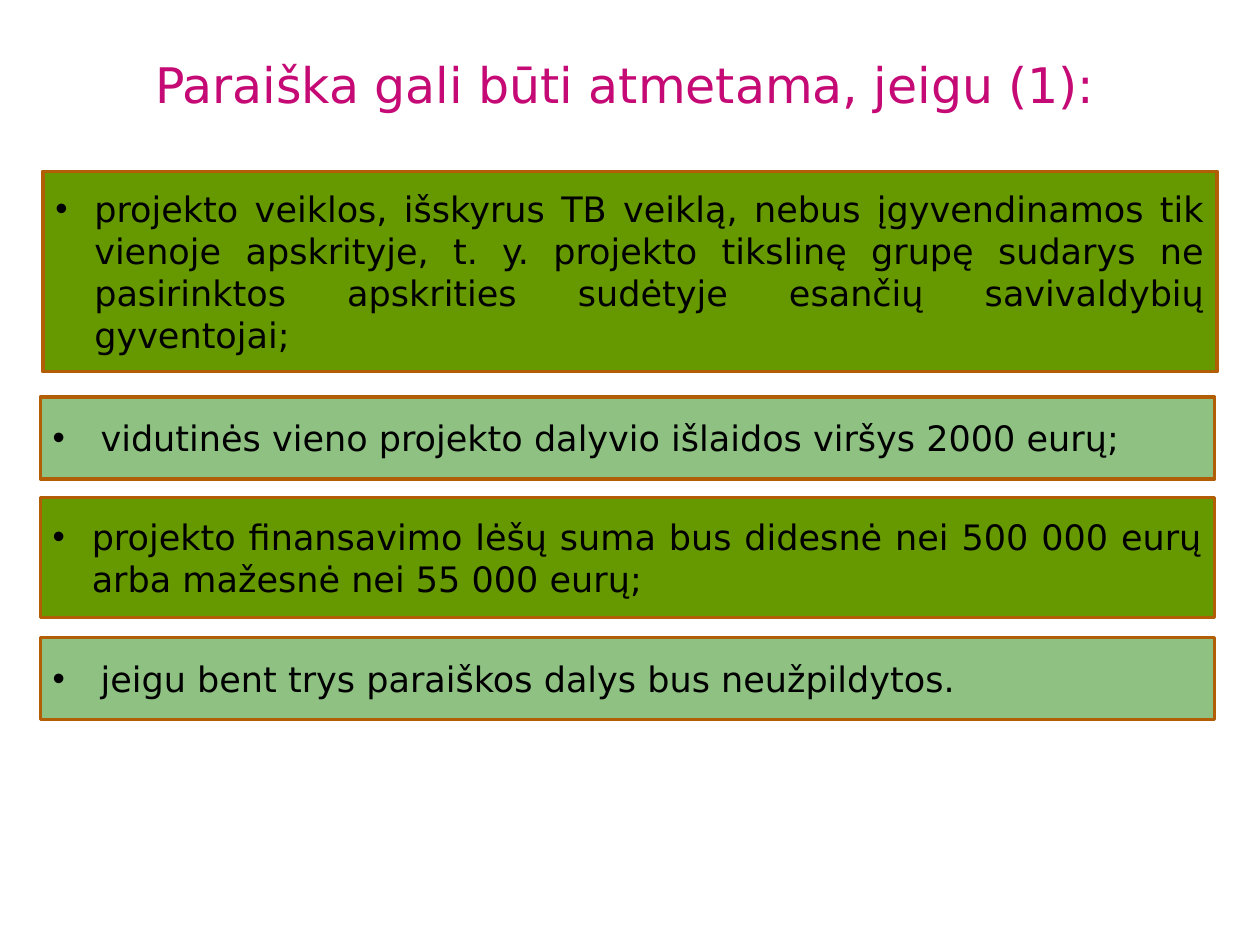
from lxml import etree
from pptx import Presentation
from pptx.dml.color import RGBColor
from pptx.enum.shapes import MSO_SHAPE
from pptx.enum.text import MSO_ANCHOR, MSO_AUTO_SIZE, PP_ALIGN
from pptx.oxml.ns import qn
from pptx.util import Inches, Pt

RECTANGLE = MSO_SHAPE.RECTANGLE
TOP, MIDDLE = MSO_ANCHOR.TOP, MSO_ANCHOR.MIDDLE
CENTER, JUSTIFY = PP_ALIGN.CENTER, PP_ALIGN.JUSTIFY
NO_AUTO_SIZE = MSO_AUTO_SIZE.NONE
TITLE_ONLY = 5
WIDTH, HEIGHT = 10, 7.5
FONT = "DejaVu Sans"
DARK_GREEN, LIGHT_GREEN = "669900", "8EC182"
BORDER, TITLE_COLOR, TEXT_COLOR = "B25E07", "C60A75", "000000"
BOX_LEFT, BOX_WIDTH = 0.32, 9.32
WIDE_INDENT, NARROW_INDENT = 0.38, 0.31

CONDITIONS = [
    (0.34, 1.36, 1.59, "projekto veiklos, išskyrus TB veiklą, nebus įgyvendinamos tik "
     "vienoje apskrityje, t. y. projekto tikslinę grupę sudarys ne pasirinktos "
     "apskrities sudėtyje esančių savivaldybių gyventojai;"),
    (BOX_LEFT, 3.15, 0.65, "vidutinės vieno projekto dalyvio išlaidos viršys 2000 eurų;"),
    (BOX_LEFT, 3.95, 0.95, "projekto finansavimo lėšų suma bus didesnė nei 500 000 eurų "
     "arba mažesnė nei 55 000 eurų;"),
    (BOX_LEFT, 5.06, 0.65, "jeigu bent trys paraiškos dalys bus neužpildytos."),
]


def color(value):
    """Turn a hex string into a colour."""
    return RGBColor.from_string(value)


def add_text(paragraph, text, size, text_color, alignment):
    """Add one formatted run to a paragraph."""
    paragraph.alignment = alignment
    run = paragraph.add_run()
    run.text = text
    run.font.name = FONT
    run.font.size = Pt(size)
    run.font.color.rgb = color(text_color)


def add_bullet(paragraph, indent):
    """Give a paragraph a round bullet with a hanging indent."""
    properties = paragraph._p.get_or_add_pPr()
    properties.set("marL", str(Inches(indent)))
    properties.set("indent", str(-Inches(indent)))
    etree.SubElement(properties, qn("a:buFont"), typeface="Arial")
    etree.SubElement(properties, qn("a:buChar"), char="•")


def set_title(slide, text):
    """Place and fill the title placeholder."""
    title = slide.shapes.title
    title.left, title.top = Inches(0), Inches(0.38)
    title.width, title.height = Inches(9.92), Inches(0.91)
    frame = title.text_frame
    frame.auto_size = NO_AUTO_SIZE
    frame.vertical_anchor = TOP
    add_text(frame.paragraphs[0], text, 28, TITLE_COLOR, CENTER)


def add_condition(slide, left, top, height, text, fill, indent):
    """Add a bordered box that holds one bulleted condition."""
    box = slide.shapes.add_shape(
        RECTANGLE, Inches(left), Inches(top), Inches(BOX_WIDTH), Inches(height))
    box.shadow.inherit = False
    box.fill.solid()
    box.fill.fore_color.rgb = color(fill)
    box.line.color.rgb = color(BORDER)
    box.line.width = Pt(2)
    frame = box.text_frame
    frame.word_wrap = True
    frame.vertical_anchor = MIDDLE
    paragraph = frame.paragraphs[0]
    add_bullet(paragraph, indent)
    add_text(paragraph, text, 20, TEXT_COLOR, JUSTIFY)


def main():
    """Build the slide and save it."""
    presentation = Presentation()
    presentation.slide_width = Inches(WIDTH)
    presentation.slide_height = Inches(HEIGHT)
    slide = presentation.slides.add_slide(presentation.slide_layouts[TITLE_ONLY])
    set_title(slide, "Paraiška gali būti atmetama, jeigu (1):")
    styles = [(DARK_GREEN, NARROW_INDENT), (LIGHT_GREEN, WIDE_INDENT)]
    for index, condition in enumerate(CONDITIONS):
        add_condition(slide, *condition, *styles[index % 2])
    presentation.save("out.pptx")


if __name__ == "__main__":
    main()
